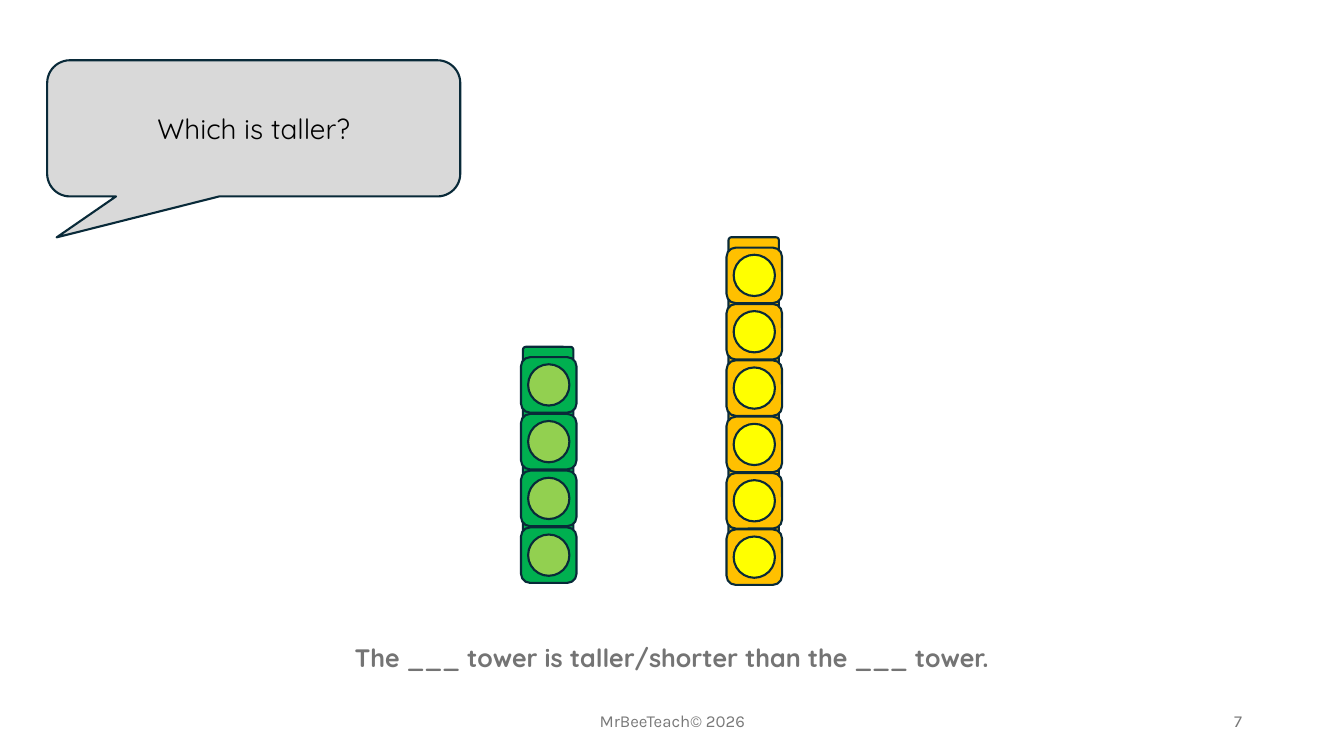
from pptx import Presentation
from pptx.dml.color import RGBColor
from pptx.enum.shapes import MSO_SHAPE
from pptx.enum.text import MSO_ANCHOR, MSO_AUTO_SIZE, PP_ALIGN
from pptx.util import Cm, Pt

CENTER, RIGHT = PP_ALIGN.CENTER, PP_ALIGN.RIGHT
TOP, MIDDLE = MSO_ANCHOR.TOP, MSO_ANCHOR.MIDDLE
FIT_SHAPE = MSO_AUTO_SIZE.SHAPE_TO_FIT_TEXT
ROUNDED, CIRCLE = MSO_SHAPE.ROUNDED_RECTANGLE, MSO_SHAPE.OVAL
CALLOUT = MSO_SHAPE.ROUNDED_RECTANGULAR_CALLOUT

OUTLINE = RGBColor(0x09, 0x2A, 0x39)
BUBBLE_GRAY = RGBColor(0xD9, 0xD9, 0xD9)
BLACK = RGBColor(0x00, 0x00, 0x00)
SENTENCE_GRAY = RGBColor(0x74, 0x74, 0x74)
FOOTER_GRAY = RGBColor(0x79, 0x79, 0x79)
GREEN = RGBColor(0x00, 0xB0, 0x50)
LIGHT_GREEN = RGBColor(0x92, 0xD0, 0x50)
ORANGE = RGBColor(0xFF, 0xC0, 0x00)
YELLOW = RGBColor(0xFF, 0xFF, 0x00)

HEADING_FONT, FOOTER_FONT = "Quicksand", "Karla"


def write_text(shape, text, *, size, font, color, bold=False, align=CENTER, anchor=MIDDLE):
    frame = shape.text_frame
    frame.word_wrap = True
    frame.vertical_anchor = anchor
    paragraph = frame.paragraphs[0]
    paragraph.alignment = align
    run = paragraph.add_run()
    run.text = text
    run.font.size = Pt(size)
    run.font.name = font
    run.font.bold = bold
    run.font.color.rgb = color


def add_label(slide, text, left, top, width, **text_format):
    label = slide.shapes.add_textbox(Cm(left), Cm(top), Cm(width), Cm(1.02))
    write_text(label, text, **text_format)
    return label


def add_outlined(shapes, kind, left, top, width, height, fill):
    shape = shapes.add_shape(kind, Cm(left), Cm(top), Cm(width), Cm(height))
    shape.shadow.inherit = False
    shape.fill.solid()
    shape.fill.fore_color.rgb = fill
    shape.line.color.rgb = OUTLINE
    shape.line.width = Pt(1.5)
    return shape


def add_speech_bubble(slide, question):
    bubble = add_outlined(slide.shapes, CALLOUT, 1.19, 1.52, 10.41, 3.43, BUBBLE_GRAY)
    bubble.adjustments[0] = -0.477
    bubble.adjustments[1] = 0.801
    write_text(bubble, question, size=20, font=HEADING_FONT, color=BLACK)


def add_cube(slide, left, top, body_color, dot_color):
    """Add a linking cube: the stud on top, the body and its round face."""
    cube = slide.shapes.add_group_shape().shapes
    add_outlined(cube, ROUNDED, left + 0.05, top, 1.27, 0.43, body_color)
    add_outlined(cube, ROUNDED, left, top + 0.26, 1.4, 1.4, body_color)
    add_outlined(cube, CIRCLE, left + 0.18, top + 0.44, 1.04, 1.04, dot_color)


def add_tower(slide, left, lowest_top, cube_count, pitch, body_color, dot_color):
    """Stack cubes from the bottom up, so each body covers the stud below it."""
    for level in range(cube_count):
        add_cube(slide, left, lowest_top - level * pitch, body_color, dot_color)


def main():
    deck = Presentation()
    deck.slide_width, deck.slide_height = Cm(33.87), Cm(19.05)
    slide = deck.slides.add_slide(deck.slide_layouts[6])

    footer_format = {"size": 12, "font": FOOTER_FONT, "color": FOOTER_GRAY}
    add_label(slide, "MrBeeTeach© 2026", 11.23, 17.65, 11.43, **footer_format)
    add_label(slide, "7", 23.93, 17.65, 7.62, align=RIGHT, **footer_format)

    sentence = add_label(
        slide, "The ___ tower is taller/shorter than the ___ tower.", 8.46, 16.05, 16.94,
        size=18, font=HEADING_FONT, color=SENTENCE_GRAY, bold=True, anchor=TOP)
    sentence.text_frame.auto_size = FIT_SHAPE

    add_speech_bubble(slide, "Which is taller?")
    add_tower(slide, 13.13, 13.03, 4, 1.43, GREEN, LIGHT_GREEN)
    add_tower(slide, 18.31, 13.08, 6, 1.42, ORANGE, YELLOW)

    deck.save("out.pptx")


if __name__ == "__main__":
    main()
